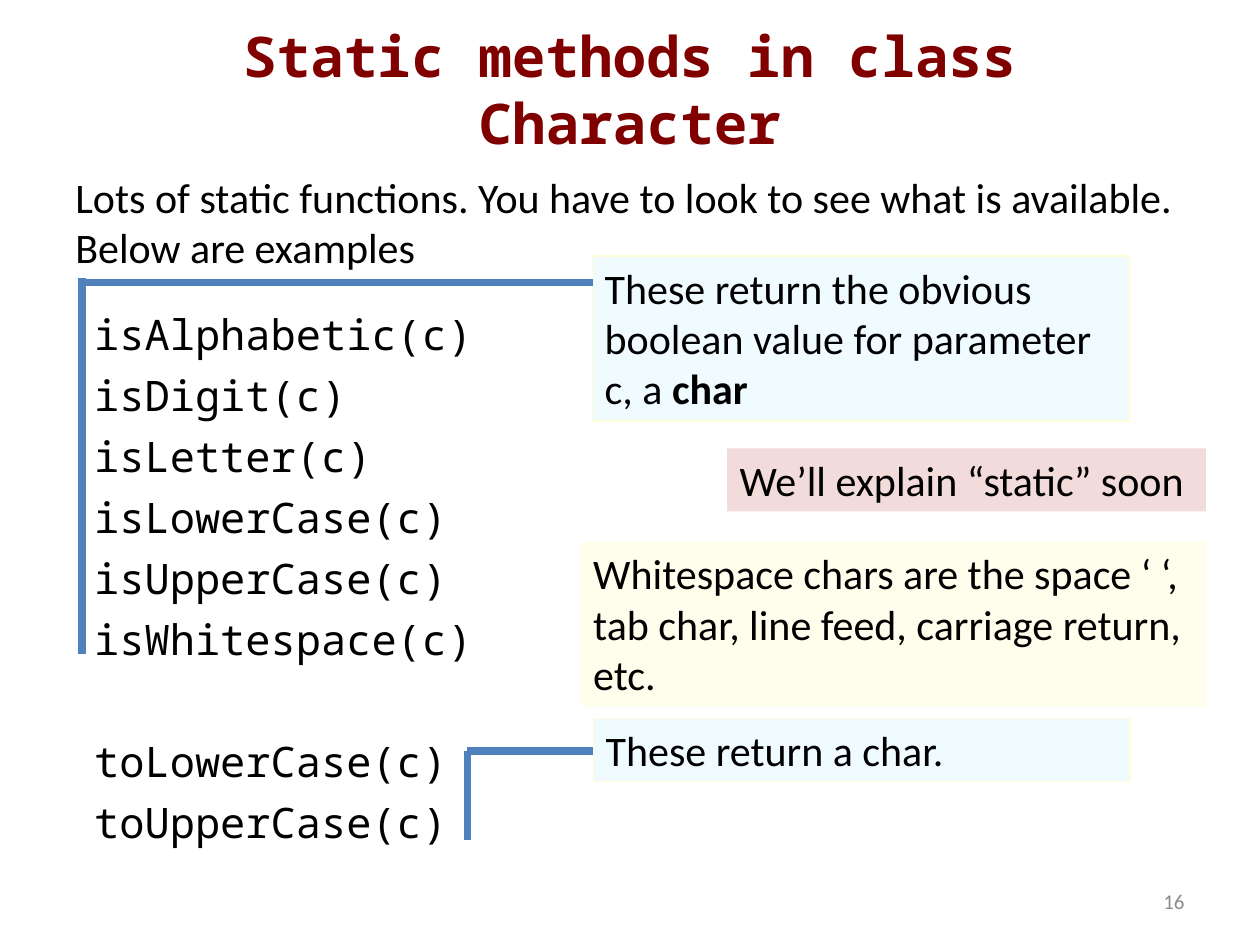
import pptx
import pptx.dml.color
import pptx.enum.shapes
import pptx.enum.text
import pptx.oxml.ns
import pptx.oxml.xmlchemy
import pptx.util
from pptx.util import Cm

MONO = "Noto Sans Mono"
PALE_BLUE = "DEF8FF"
PALE_YELLOW = "FFFCD7"
PALE_RED = "F2DCDB"
BRACKET_BLUE = "4F81BD"
ALIGN = pptx.enum.text.PP_ALIGN
ANCHOR = pptx.enum.text.MSO_ANCHOR


def set_color(target, value):
    target.rgb = pptx.dml.color.RGBColor.from_string(value)


def add_run(paragraph, text, font="Calibri", size=24, color="000000", bold=False):
    run = paragraph.add_run()
    run.text = text
    run.font.name = font
    run.font.size = pptx.util.Pt(size)
    run.font.bold = bold
    set_color(run.font.color, color)


def write_text(shape, lines, align=ALIGN.LEFT, anchor=ANCHOR.TOP, before=0,
               wrap=True, grow=True, **run_format):
    frame = shape.text_frame
    frame.word_wrap = wrap
    frame.vertical_anchor = anchor
    if grow:
        frame.auto_size = pptx.enum.text.MSO_AUTO_SIZE.SHAPE_TO_FIT_TEXT
    for index, line in enumerate(lines):
        paragraph = frame.add_paragraph() if index else frame.paragraphs[0]
        paragraph.alignment = align
        paragraph.space_before = pptx.util.Pt(before)
        add_run(paragraph, line, **run_format)
    return frame


def add_text(slide, position, lines, **text_format):
    shape = slide.shapes.add_textbox(*map(Cm, position))
    return write_text(shape, lines, **text_format)


def add_note(slide, position, lines, fill, opacity=100, outline=None, **text_format):
    shape = slide.shapes.add_shape(
        pptx.enum.shapes.MSO_SHAPE.RECTANGLE, *map(Cm, position))
    shape.shadow.inherit = False
    shape.fill.solid()
    set_color(shape.fill.fore_color, fill)
    if opacity < 100:
        color_element = shape._element.spPr.find(".//" + pptx.oxml.ns.qn("a:srgbClr"))
        alpha = pptx.oxml.xmlchemy.OxmlElement("a:alpha")
        alpha.set("val", str(opacity * 1000))
        color_element.append(alpha)
    if outline:
        set_color(shape.line.color, outline)
        shape.line.width = pptx.util.Pt(0.75)
    else:
        shape.line.fill.background()
    return write_text(shape, lines, **text_format)


def add_line(slide, start, end):
    line = slide.shapes.add_connector(
        pptx.enum.shapes.MSO_CONNECTOR.STRAIGHT, *map(Cm, start + end))
    set_color(line.line.color, BRACKET_BLUE)
    line.line.width = pptx.util.Pt(4.25)
    line._element.spPr.append(pptx.oxml.xmlchemy.OxmlElement("a:effectLst"))


def main():
    presentation = pptx.Presentation()
    presentation.slide_width = Cm(25.4)
    presentation.slide_height = Cm(19.05)
    slide = presentation.slides.add_slide(presentation.slide_layouts[6])

    title = add_text(slide, (1.27, 0.76, 22.86, 2.06),
                     ["Static methods in class Character"], font=MONO, size=32,
                     color="800000", bold=True, align=ALIGN.CENTER,
                     anchor=ANCHOR.MIDDLE, grow=False)
    title.margin_left = title.margin_right = Cm(0.4)
    add_text(slide, (1.27, 3.33, 23.65, 2.31),
             ["Lots of static functions. You have to look to see what is available. "
              "Below are examples"])
    methods = add_text(slide, (1.65, 6.1, 9.73, 11.2),
                       ["isAlphabetic(c)", "isDigit(c)", "isLetter(c)",
                        "isLowerCase(c)", "isUpperCase(c)", "isWhitespace(c)",
                        "toLowerCase(c)", "toUpperCase(c)"], font=MONO, before=6)
    methods.paragraphs[6].space_before = pptx.util.Pt(41)

    boolean_note = add_note(
        slide, (11.94, 5.16, 10.82, 3.33),
        ["These return the obvious boolean value for parameter c, a "],
        PALE_BLUE, opacity=48, outline=PALE_YELLOW)
    add_run(boolean_note.paragraphs[0], "char", bold=True)

    add_line(slide, (1.65, 5.61), (1.65, 13.18))
    add_line(slide, (11.96, 5.69), (1.65, 5.69))
    add_note(slide, (11.71, 10.92, 12.62, 3.33),
             ["Whitespace chars are the space ‘ ‘,",
              "tab char, line feed, carriage return,", "etc."],
             PALE_YELLOW, opacity=48, wrap=False)
    add_note(slide, (11.96, 14.48, 10.82, 1.27), ["These return a char."],
             PALE_BLUE, opacity=48, outline=PALE_YELLOW)
    add_line(slide, (11.96, 15.14), (9.42, 15.14))
    add_line(slide, (9.42, 15.14), (9.42, 16.94))
    add_text(slide, (18.21, 17.65, 5.92, 1.02), ["16"], size=12, color="8C8C8C",
             align=ALIGN.RIGHT, anchor=ANCHOR.MIDDLE, grow=False)
    add_note(slide, (14.66, 9.04, 9.65, 1.27), ["We’ll explain “static” soon"],
             PALE_RED, wrap=False)

    presentation.save("out.pptx")


if __name__ == "__main__":
    main()
